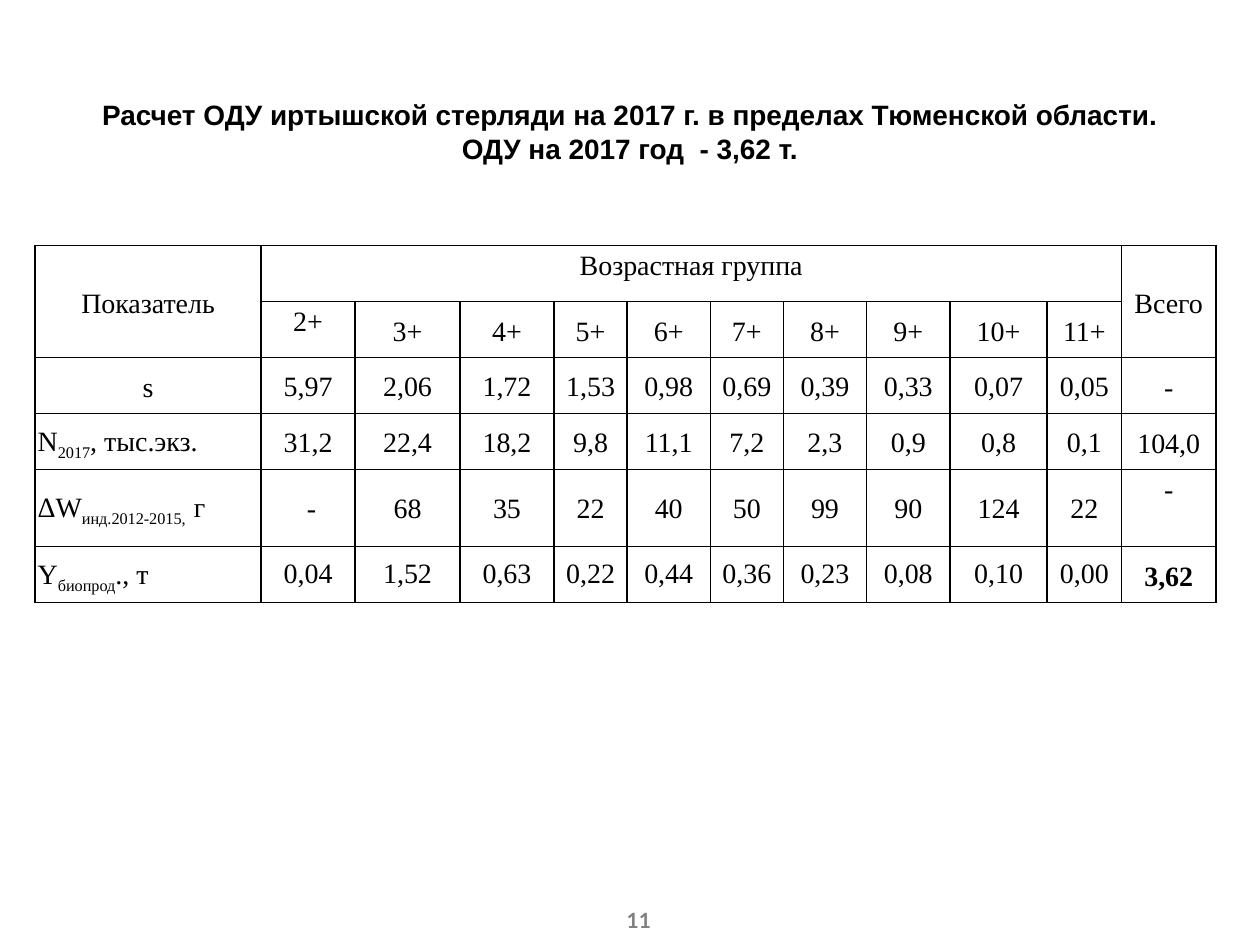
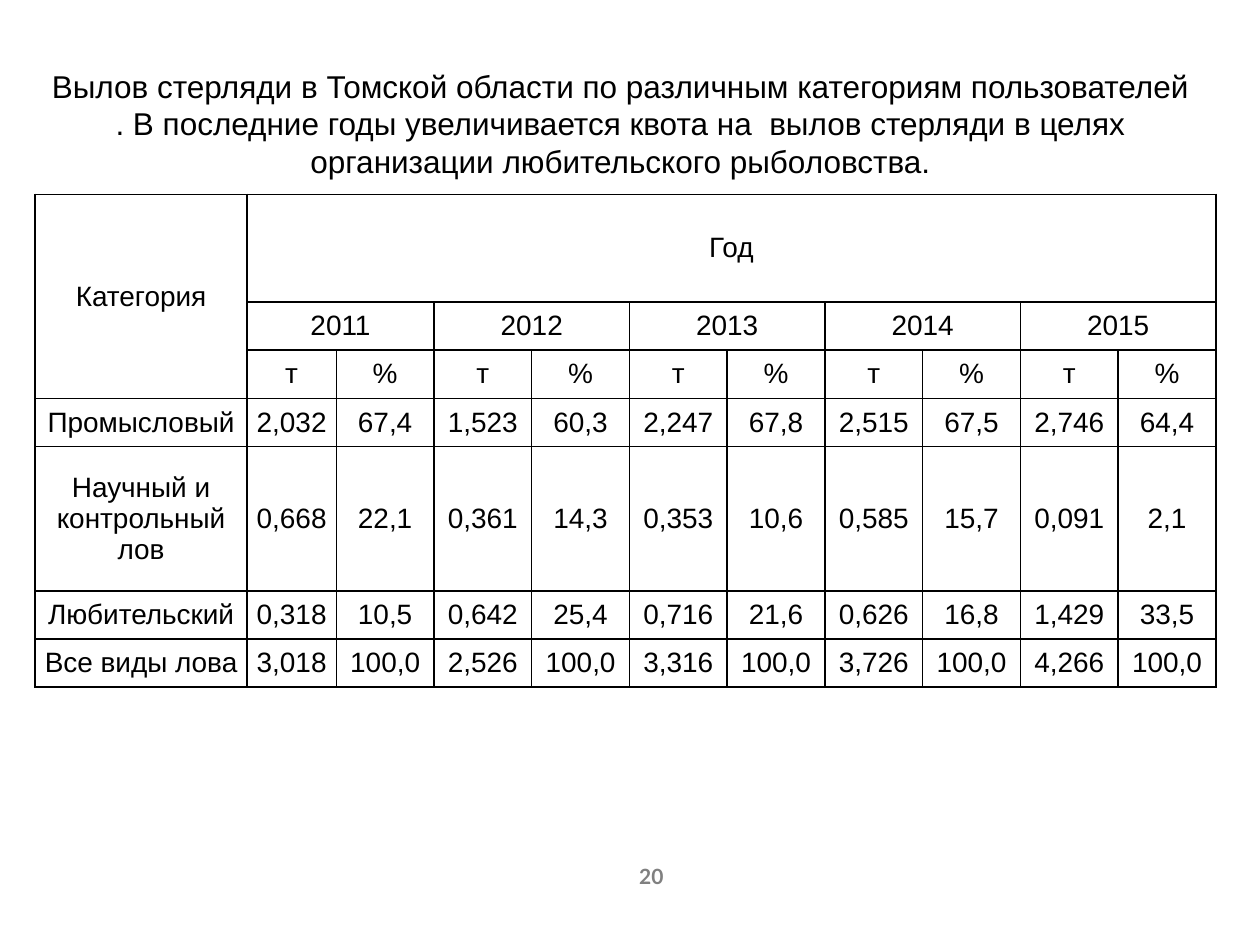
from lxml import etree
from pptx import Presentation
from pptx import util as u
from pptx.dml.color import RGBColor
from pptx.enum import text
from pptx.oxml import ns

BLACK, GREY = "000000", "808080"
SANS, SERIF, FOOTER = "Arial", "Times New Roman", "Lato"
MIDDLE, TOP = text.MSO_ANCHOR.MIDDLE, text.MSO_ANCHOR.TOP
CENTER, LEFT = text.PP_ALIGN.CENTER, text.PP_ALIGN.LEFT


def color(value):
    """Turn a hex string into a colour."""
    return RGBColor.from_string(value)


class Slides:
    """Hold the shared style and the current slide."""

    def __init__(self):
        """Open an empty 4:3 deck."""
        self.deck = Presentation()
        self.deck.slide_width = u.Cm(25.4)
        self.deck.slide_height = u.Cm(19.05)
        self.page = None

    def new_page(self):
        """Start a blank slide."""
        self.page = self.deck.slides.add_slide(self.deck.slide_layouts[6])

    def style(self, para, font, size, bold=False, ink=BLACK):
        """Centre a paragraph and format its runs."""
        para.alignment = CENTER
        for span in para.runs:
            span.font.name = font
            span.font.size = u.Pt(size)
            span.font.bold = bold
            span.font.color.rgb = color(ink)

    def label(self, words, place, font, size, bold=False, ink=BLACK):
        """Add a centred text box."""
        box = self.page.shapes.add_textbox(*map(u.Cm, place))
        frame = box.text_frame
        frame.word_wrap = True
        frame.vertical_anchor = MIDDLE
        frame.text = words
        self.style(frame.paragraphs[0], font, size, bold, ink)

    def title(self, words, place, size, bold=False):
        """Add the slide heading."""
        self.label(words, place, SANS, size, bold)

    def number(self, words, left, top):
        """Add the slide number."""
        self.label(words, (left, top, 5.08, 1.02), FOOTER, 12, True, GREY)

    def border(self, cell):
        """Draw a thin black line on each side of a cell."""
        props = cell._tc.get_or_add_tcPr()
        for index, side in enumerate(("a:lnL", "a:lnR", "a:lnT", "a:lnB")):
            line = etree.Element(ns.qn(side), w=str(u.Pt(1)))
            fill = etree.SubElement(line, ns.qn("a:solidFill"))
            etree.SubElement(fill, ns.qn("a:srgbClr"), val=BLACK)
            props.insert(index, line)

    def fill_cell(self, cell, words, font):
        """Write cell text, lowering the parts between underscores."""
        para = cell.text_frame.paragraphs[0]
        for index, part in enumerate(words.split("_")):
            span = para.add_run()
            span.text = part
            if index % 2:
                span._r.get_or_add_rPr().set("baseline", "-25000")
        self.style(para, font, 16)

    def adjust(self, cell, inset, spacing=None):
        """Set the side margins and line spacing of a cell."""
        cell.margin_left = cell.margin_right = u.Cm(inset)
        if spacing:
            cell.text_frame.paragraphs[0].line_spacing = spacing

    def table(self, top, widths, heights, rows, merges, font):
        """Add a bordered table and return it."""
        frame = self.page.shapes.add_table(
            len(rows), len(widths), u.Cm(0.71), u.Cm(top),
            u.Cm(sum(widths)), u.Cm(sum(heights)))
        grid = frame.table
        grid.first_row = grid.horz_banding = False
        for column, width in zip(grid.columns, widths):
            column.width = u.Cm(width)
        for line, height, values in zip(grid.rows, heights, rows):
            line.height = u.Cm(height)
            for cell, words in zip(line.cells, values):
                cell.fill.background()
                self.border(cell)
                cell.margin_top = cell.margin_bottom = 0
                self.adjust(cell, 0.17)
                cell.vertical_anchor = MIDDLE
                if words:
                    self.fill_cell(cell, words, font)
        for first, last in merges:
            grid.cell(*first).merge(grid.cell(*last))
        return grid


def quota_slide(slides):
    """Build the slide with the catch quota by age group."""
    slides.new_page()
    slides.title("Расчет ОДУ иртышской стерляди на 2017 г. в пределах Тюменской "
                 "области. ОДУ на 2017 год  - 3,62 т.",
                 (1.5, 1.83, 22.4, 1.63), 16, True)
    slides.number("11", 10.34, 18.03)
    ages = [f"{age}+" for age in range(2, 12)]
    rows = [
        ["Показатель", "Возрастная группа"] + [""] * 9 + ["Всего"],
        ["", *ages, ""],
        ["s", *"5,97 2,06 1,72 1,53 0,98 0,69 0,39 0,33 0,07 0,05 -".split()],
        ["N_2017_, тыс.экз.",
         *"31,2 22,4 18,2 9,8 11,1 7,2 2,3 0,9 0,8 0,1 104,0".split()],
        ["ΔW_инд.2012-2015,  _г", " -",
         *"68 35 22 40 50 99 90 124 22 -".split()],
        ["Y_биопрод_., т",
         *"0,04 1,52 0,63 0,22 0,44 0,36 0,23 0,08 0,10 0,00 3,62".split()],
    ]
    widths = [4.55, 1.9, 2.11, 1.9, 1.47, 1.68, 1.47, 1.68, 1.68, 1.96, 1.5, 1.9]
    heights = [1.13] * 4 + [1.55, 1.13]
    merges = [((0, 0), (1, 0)), ((0, 1), (0, 10)), ((0, 11), (1, 11))]
    grid = slides.table(4.95, widths, heights, rows, merges, SERIF)
    last_row, last_column = len(rows) - 1, len(widths) - 1
    for row in range(len(rows)):
        for column in range(len(widths)):
            cell = grid.cell(row, column)
            if row < 2 or column in (0, last_column):
                slides.adjust(cell, 0.05, 1.15)
            elif row == last_row:
                slides.adjust(cell, 0)
            else:
                slides.adjust(cell, 0.17, 1.07)
    for row in range(3, len(rows)):
        grid.cell(row, 0).text_frame.paragraphs[0].alignment = LEFT
    for place in ((0, 1), (1, 1), (4, last_column)):
        grid.cell(*place).vertical_anchor = TOP
    total = grid.cell(last_row, last_column)
    total.text_frame.paragraphs[0].runs[0].font.bold = True


def catch_slide(slides):
    """Build the slide with the catch by category and year."""
    slides.new_page()
    years = [str(year) for year in range(2011, 2016)]
    rows = [
        ["Категория", "Год"] + [""] * 9,
        [""] + [words for year in years for words in (year, "")],
        [""] + ["т", "%"] * len(years),
        ["Промысловый",
         *"2,032 67,4 1,523 60,3 2,247 67,8 2,515 67,5 2,746 64,4".split()],
        ["Научный и контрольный лов",
         *"0,668 22,1 0,361 14,3 0,353 10,6 0,585 15,7 0,091 2,1".split()],
        ["Любительский",
         *"0,318 10,5 0,642 25,4 0,716 21,6 0,626 16,8 1,429 33,5".split()],
        ["Все виды лова",
         *"3,018 100,0 2,526 100,0 3,316 100,0 3,726 100,0 4,266 100,0".split()],
    ]
    widths = [4.27, 1.8] + [1.97] * 9
    heights = [2.17] + [0.97] * 3 + [2.91] + [0.97] * 2
    merges = [((0, 0), (2, 0)), ((0, 1), (0, 10))]
    merges += [((1, column), (1, column + 1)) for column in range(1, 11, 2)]
    slides.table(3.92, widths, heights, rows, merges, SANS)
    slides.number("20", 10.59, 17.15)
    slides.title("Вылов стерляди в Томской области по различным категориям "
                 "пользователей . В последние годы увеличивается квота на  вылов "
                 "стерляди в целях организации любительского рыболовства.",
                 (0.71, 1.2, 23.6, 2.57), 18)


def main():
    """Build and save the deck."""
    slides = Slides()
    quota_slide(slides)
    catch_slide(slides)
    slides.deck.save("out.pptx")


if __name__ == "__main__":
    main()
